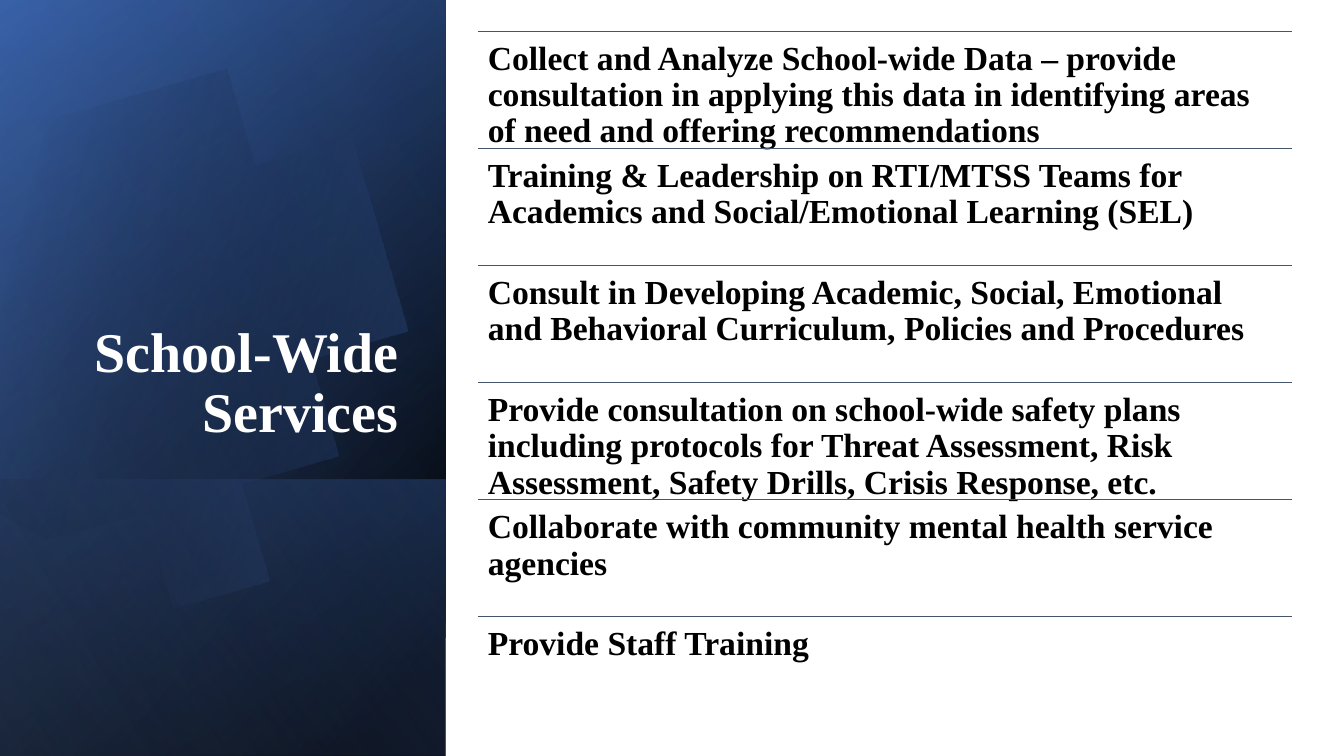
from math import cos, radians, sin

from pptx import Presentation
from pptx.dml.color import RGBColor
from pptx.enum.shapes import MSO_CONNECTOR, MSO_SHAPE
from pptx.enum.text import MSO_ANCHOR, PP_ALIGN
from pptx.oxml import parse_xml
from pptx.oxml.ns import nsdecls, qn
from pptx.util import Inches, Pt

BLACK = RGBColor(0x00, 0x00, 0x00)
WHITE = RGBColor(0xFF, 0xFF, 0xFF)
BLUE = RGBColor(0x44, 0x72, 0xC4)
DEEP_BLUE = RGBColor(0x2F, 0x55, 0x97)
PALE_BLUE = RGBColor(0x8F, 0xAA, 0xDC)
SLATE = RGBColor(0x44, 0x54, 0x6A)


def set_gradient(shape, stops, angle):
    """Stops are (position %, colour, opacity %)."""
    stop_xml = "".join(
        f'<a:gs pos="{position * 1000}"><a:srgbClr val="{color}">'
        f'<a:alpha val="{opacity * 1000}"/></a:srgbClr></a:gs>'
        for position, color, opacity in stops)
    gradient = parse_xml(
        f'<a:gradFill {nsdecls("a")} rotWithShape="1"><a:gsLst>{stop_xml}</a:gsLst>'
        f'<a:lin ang="{angle * 60000}" scaled="0"/></a:gradFill>')
    shape.fill.background()
    properties = shape._element.spPr
    properties.replace(properties.find(qn("a:noFill")), gradient)
    shape.line.fill.background()
    shape.shadow.inherit = False


def add_text(shapes, box, text, size, color, anchor, align, inset):
    text_box = shapes.add_textbox(*map(Inches, box))
    frame = text_box.text_frame
    frame_format = {"word_wrap": True, "vertical_anchor": anchor,
                    "margin_top": Inches(inset), "margin_bottom": Inches(inset)}
    for name, value in frame_format.items():
        setattr(frame, name, value)
    paragraph = frame.paragraphs[0]
    paragraph.alignment = align
    paragraph.line_spacing = 0.9
    run = paragraph.add_run()
    run.text = text
    run.font.color.rgb = color
    font_format = {"name": "Times New Roman", "size": Pt(size), "bold": True}
    for name, value in font_format.items():
        setattr(run.font, name, value)


presentation = Presentation()
presentation.slide_width = Inches(13.33)
presentation.slide_height = Inches(7.5)
slide = presentation.slides.add_slide(presentation.slide_layouts[6])

# Side panel: layered gradients, with the disc below the last one
FULL_PANEL = (-1.54, 1.54, 7.5, 4.42)
LOWER_PANEL = (0.84, 3.92, 2.74, 4.42)
panel_layers = [
    (FULL_PANEL, [(8, BLACK, 100), (100, DEEP_BLUE, 100)], 50),
    (FULL_PANEL, [(0, BLACK, 0), (99, BLUE, 46)], 30),
    (LOWER_PANEL, [(2, BLUE, 29), (100, BLACK, 30)], 130),
    (None, [(29, BLACK, 0), (100, BLUE, 43)], 30),
    (FULL_PANEL, [(0, BLACK, 0), (99, PALE_BLUE, 11)], 120),
]

# Disc outline: Bezier curves sampled into points, cut off at the left
disc_start = (1.49, 1.1)
disc_curves = [
    [(2.46, 1.12), (3.35, 1.77), (3.63, 2.75)],
    [(3.98, 3.97), (3.28, 5.23), (2.07, 5.58)],
    [(1.31, 5.8), (0.53, 5.61), (-0.03, 5.14)],
    [(-0.15, 5.03)],
    [(-0.15, 1.75)],
    [(0, 1.61)],
    [(0.23, 1.42), (0.5, 1.28), (0.8, 1.19)],
    [(1.03, 1.13), (1.26, 1.1), disc_start],
]
STEPS = 24
disc_points = [disc_start]
for curve in disc_curves:
    if len(curve) == 1:
        disc_points += curve
        continue
    controls = [disc_points[-1], *curve]
    for step in range(1, STEPS + 1):
        t = step / STEPS
        weights = ((1 - t) ** 3, 3 * t * (1 - t) ** 2, 3 * t ** 2 * (1 - t), t ** 3)
        disc_points.append(tuple(
            sum(weight * point[axis] for weight, point in zip(weights, controls))
            for axis in (0, 1)))

# The outline is turned back so that the shape's rotation restores it
DISC_TURN = 16.1
center_x, center_y = 1.585, 3.345
cosine, sine = cos(radians(DISC_TURN)), sin(radians(DISC_TURN))
turned_points = [
    (center_x + (x - center_x) * cosine - (y - center_y) * sine,
     center_y + (x - center_x) * sine + (y - center_y) * cosine)
    for x, y in disc_points]

for box, stops, angle in panel_layers:
    if box:
        shape = slide.shapes.add_shape(MSO_SHAPE.RECTANGLE, *map(Inches, box))
        shape.rotation = 90
        shape._element.spPr.find(qn("a:xfrm")).set("flipH", "1")
    else:
        builder = slide.shapes.build_freeform(*turned_points[0], scale=Inches(1))
        builder.add_line_segments(turned_points[1:], close=True)
        shape = builder.convert_to_shape()
        shape.rotation = 360 - DISC_TURN
    set_gradient(shape, stops, angle)

# Title
add_text(slide.shapes, (0.64, 1.84, 3.41, 2.62), "School-Wide Services",
         40, WHITE, MSO_ANCHOR.BOTTOM, PP_ALIGN.RIGHT, 0.05)

# List of services, each under a thin rule
services = [
    "Collect and Analyze School-wide Data – provide consultation in applying "
    "this data in identifying areas of need and offering recommendations",
    "Training & Leadership on RTI/MTSS Teams for Academics and "
    "Social/Emotional Learning (SEL)",
    "Consult in Developing Academic, Social, Emotional and Behavioral "
    "Curriculum, Policies and Procedures",
    "Provide consultation on school-wide safety plans including protocols for "
    "Threat Assessment, Risk Assessment, Safety Drills, Crisis Response, etc.",
    "Collaborate with community mental health service agencies",
    "Provide Staff Training",
]
LIST_LEFT, LIST_TOP, LIST_BOTTOM, LIST_WIDTH = 4.74, 0.31, 7.28, 8.07
row_height = (LIST_BOTTOM - LIST_TOP) / len(services)
service_list = slide.shapes.add_group_shape()
for index, service in enumerate(services):
    top = LIST_TOP + index * row_height
    rule = service_list.shapes.add_connector(
        MSO_CONNECTOR.STRAIGHT, Inches(LIST_LEFT), Inches(top),
        Inches(LIST_LEFT + LIST_WIDTH), Inches(top))
    rule.line.color.rgb = SLATE
    rule.line.width = Pt(0.5)
    rule._element.spPr.append(parse_xml(f'<a:effectLst {nsdecls("a")}/>'))
    add_text(service_list.shapes, (LIST_LEFT, top, LIST_WIDTH, row_height), service,
             24, BLACK, MSO_ANCHOR.TOP, PP_ALIGN.LEFT, 0.1)

presentation.save("out.pptx")
